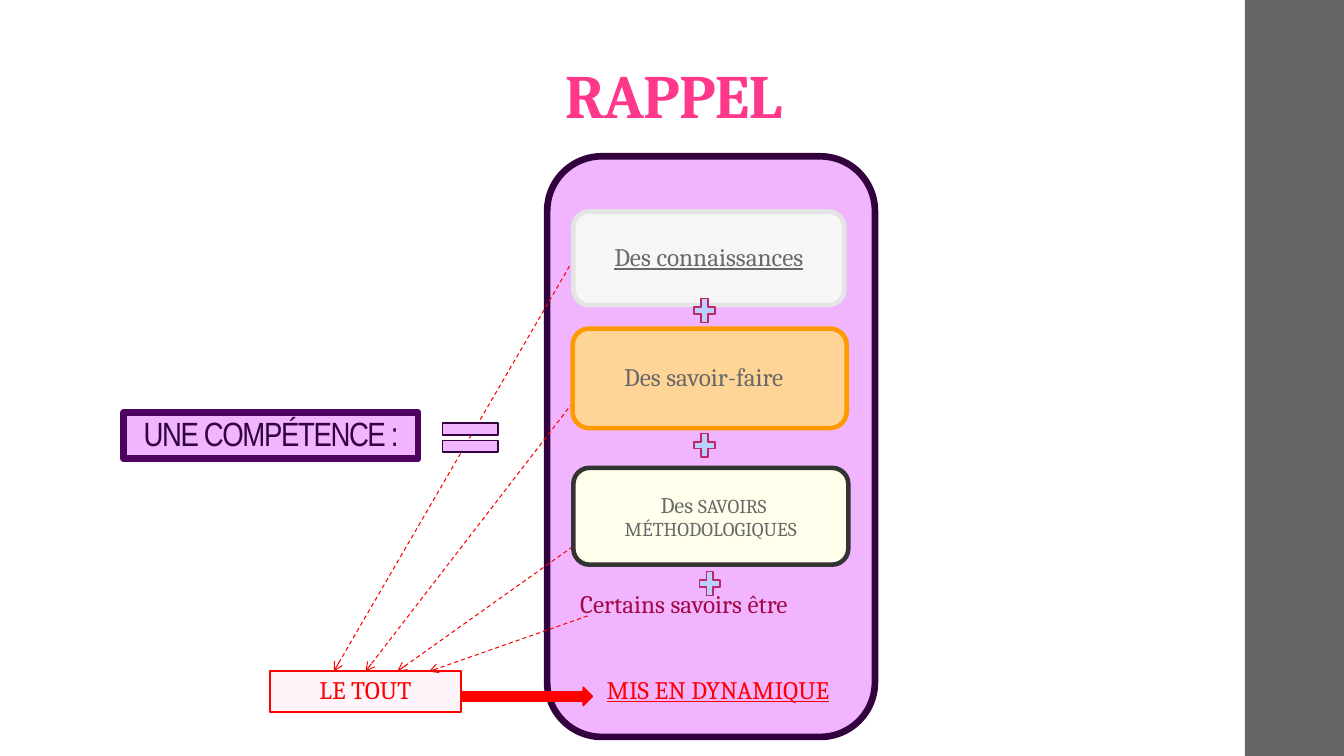
"""Build the RAPPEL slide, which breaks a competence down into its parts."""
from typing import NamedTuple

from lxml.etree import SubElement
from pptx import Presentation
from pptx.dml.color import RGBColor
from pptx.enum.dml import MSO_LINE
from pptx.enum.shapes import MSO_CONNECTOR, MSO_SHAPE as Preset
from pptx.enum.text import MSO_ANCHOR as Anchor, PP_ALIGN
from pptx.oxml.ns import qn
from pptx.util import Cm, Pt

RED, PLUM, LILAC, GREY = "FF0000", "34013F", "F1B4FE", "696969"


class Box(NamedTuple):
    left: float
    top: float
    width: float
    height: float


class Run(NamedTuple):
    text: str
    size: float = 18


class Card(NamedTuple):
    box: Box
    fill: str
    line: str
    runs: list[Run]
    underline: bool = False
    right_inset: float = 0.25


CARDS = [
    Card(Box(14.45, 5.33, 6.83, 2.36), "F6F6F6", "E4E4E4", [Run("Des connaissances")], underline=True),
    Card(Box(14.43, 8.28, 6.91, 2.51), "FFD597", "FF9900", [Run("Des savoir-faire")], right_inset=0.55),
    Card(Box(14.45, 11.79, 6.93, 2.44), "FFFFEB", "333333",
         [Run(" "), Run("Des ", 16), Run("SAVOIRS MÉTHODOLOGIQUES", 14)]),
]
PLUS_CORNERS = [(17.4, 7.42), (17.4, 10.82), (17.53, 14.3)]
LINK_STARTS = [(14.81, 5.92), (15.21, 9.14), (15.62, 12.93), (14.81, 15.52)]
LINK_END_LEFT, LINK_END_STEP = 8.41, 0.8
WHOLE_BOX = Box(6.81, 16.92, 4.8, 1.02)


def colour(value: str) -> RGBColor:
    """Turn a hex string into a colour."""
    return RGBColor.from_string(value)


def place(shape, box: Box) -> None:
    """Move and size a shape in centimetres."""
    shape.left, shape.top, shape.width, shape.height = map(Cm, box)


def write(shape, runs: list[Run], *, color: str, font: str = "Cambria", bold: bool = False,
          underline: bool = False, spacing: int = 0, anchor=Anchor.MIDDLE,
          right_inset: float = 0.25) -> None:
    """Write one centred paragraph of formatted runs."""
    frame = shape.text_frame
    frame.word_wrap = True
    frame.vertical_anchor = anchor
    frame.margin_right = Cm(right_inset)
    paragraph = frame.paragraphs[0]
    paragraph.alignment = PP_ALIGN.CENTER
    paragraph.line_spacing = 0.9
    for text, size in runs:
        run = paragraph.add_run()
        run.text = text
        run.font.name, run.font.size = font, Pt(size)
        run.font.bold, run.font.underline = bold, underline
        run.font.color.rgb = colour(color)
        if spacing:
            run.font._element.set("spc", str(spacing))


def add_figure(slide, preset, box: Box, fill: str, line: str = "", weight: float = 1.1):
    """Add a flat filled shape, outlined when a line colour is given."""
    shape = slide.shapes.add_shape(preset, *map(Cm, box))
    shape.shadow.inherit = False
    shape.fill.solid()
    shape.fill.fore_color.rgb = colour(fill)
    if line:
        shape.line.color.rgb = colour(line)
        shape.line.width = Pt(weight)
    else:
        shape.line.fill.background()
    return shape


def add_label(slide, box: Box, text: str, color: str, underline: bool = False) -> None:
    """Add a free line of text."""
    label = slide.shapes.add_textbox(*map(Cm, box))
    write(label, [Run(text)], color=color, underline=underline)


def add_link(slide, start: tuple[float, float], end: tuple[float, float]):
    """Add a dashed red arrow."""
    link = slide.shapes.add_connector(MSO_CONNECTOR.STRAIGHT, *map(Cm, start + end))
    link.line.color.rgb = colour(RED)
    link.line.width = Pt(0.75)
    link.line.dash_style = MSO_LINE.DASH
    SubElement(link.line._get_or_add_ln(), qn("a:tailEnd"), type="arrow")
    SubElement(link._element.spPr, qn("a:effectLst"))
    return link


def main() -> None:
    """Build and save the slide."""
    deck = Presentation()
    deck.slide_width, deck.slide_height = Cm(33.87), Cm(19.05)
    slide = deck.slides.add_slide(deck.slide_layouts[5])

    add_figure(slide, Preset.RECTANGLE, Box(31.37, 0, 2.5, 19.05), "666666")
    title = slide.shapes.title
    place(title, Box(3.51, 0.81, 26.92, 2.64))
    write(title, [Run("RAPPEL", 44)], color="FF388C", bold=True, spacing=-50, anchor=Anchor.BOTTOM)

    add_figure(slide, Preset.ROUNDED_RECTANGLE, Box(13.79, 3.94, 8.26, 14.63), LILAC, PLUM, 4.75)
    add_label(slide, Box(14.68, 16.94, 6.83, 0.94), "MIS EN DYNAMIQUE", RED, underline=True)
    add_figure(slide, Preset.RIGHT_ARROW, Box(11.63, 17.32, 3.3, 0.46), RED, RED)
    whole = add_figure(slide, Preset.RECTANGLE, WHOLE_BOX, "FEF4F9", RED, 1.5)
    write(whole, [Run("LE TOUT")], color=RED)

    links = [add_link(slide, start, (LINK_END_LEFT + i * LINK_END_STEP, WHOLE_BOX.top))
             for i, start in enumerate(LINK_STARTS)]
    links[1].end_connect(whole, 0)

    for card in CARDS:
        shape = add_figure(slide, Preset.ROUNDED_RECTANGLE, card.box, card.fill, card.line, 3.25)
        write(shape, card.runs, color=GREY, underline=card.underline, right_inset=card.right_inset)
    add_label(slide, Box(14.15, 14.78, 6.17, 0.94), "Certains savoirs être", "A10A46")
    for left, top in PLUS_CORNERS:
        add_figure(slide, Preset.MATH_PLUS, Box(left, top, 0.71, 0.81), "BBD0FC", "BD2968")

    competence = add_figure(slide, Preset.RECTANGLE, Box(3.12, 10.39, 7.42, 1.17), LILAC, "4E015E", 4.75)
    write(competence, [Run("UNE COMPÉTENCE :", 24)], color=PLUM, font="Arial Narrow", spacing=-100)
    add_figure(slide, Preset.MATH_EQUAL, Box(10.9, 10.41, 1.91, 1.24), LILAC, PLUM)

    deck.save("out.pptx")


if __name__ == "__main__":
    main()
